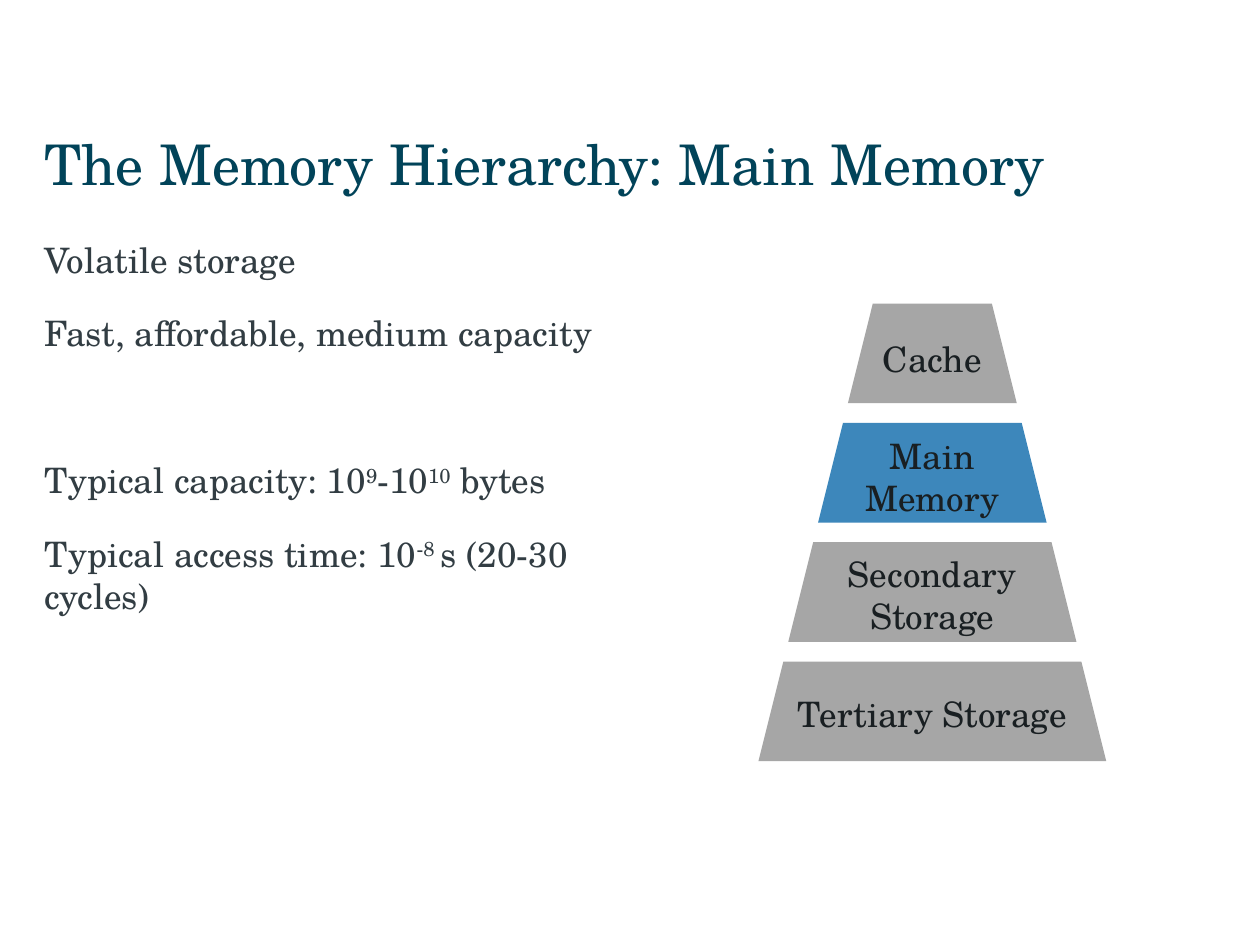
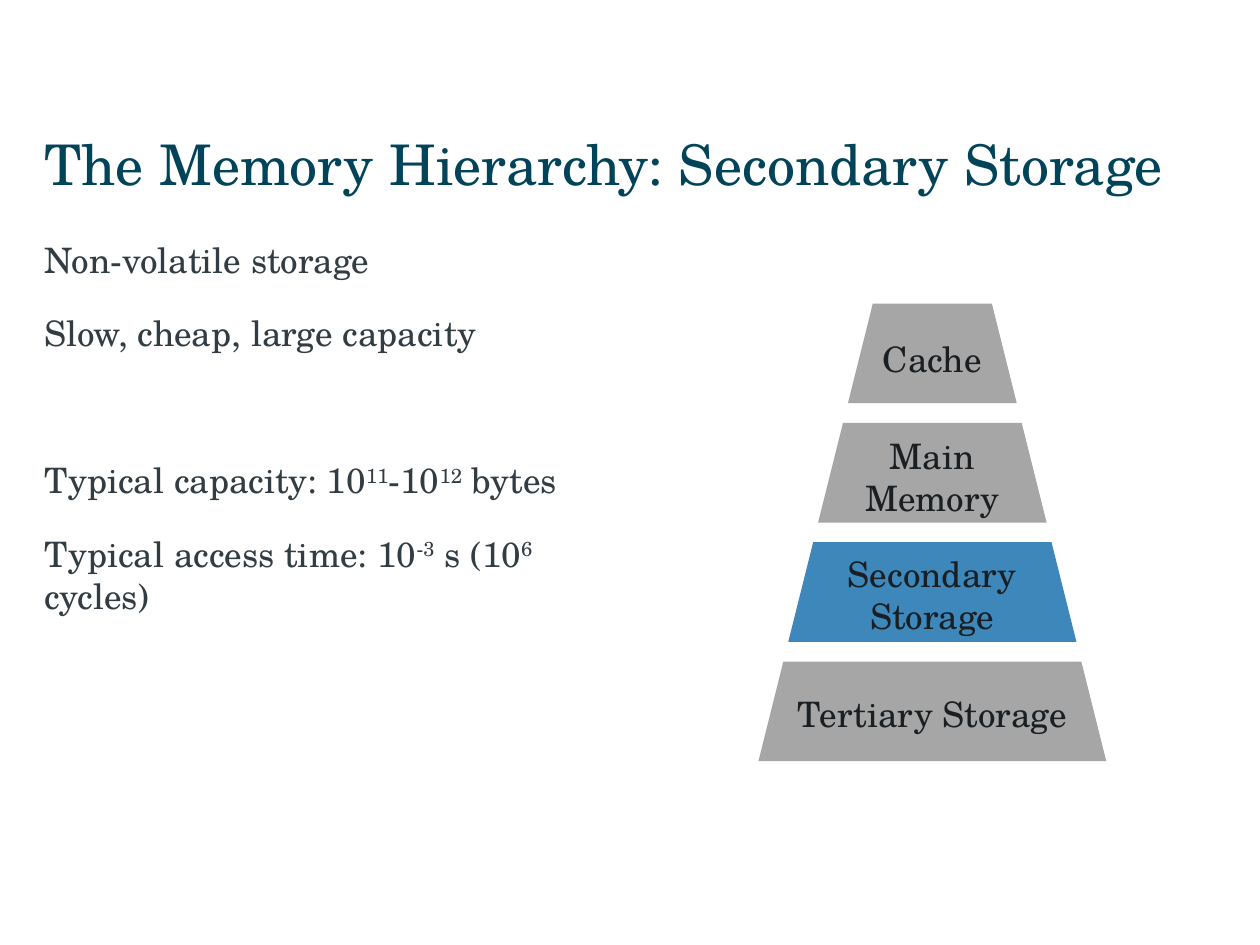
import pptx
import pptx.util
import pptx.dml.color
import pptx.enum.shapes
import pptx.enum.text

Inches = pptx.util.Inches
Pt = pptx.util.Pt
RGBColor = pptx.dml.color.RGBColor
Align = pptx.enum.text.PP_ALIGN
Anchor = pptx.enum.text.MSO_ANCHOR

FONT = "TeX Gyre Schola"
TEAL = RGBColor(0x01, 0x43, 0x59)
SLATE = RGBColor(0x32, 0x3D, 0x43)
INK = RGBColor(0x19, 0x1F, 0x22)
GREY = RGBColor(0xA6, 0xA6, 0xA6)
BLUE = RGBColor(0x3D, 0x87, 0xBB)

LEVELS = ["Cache", "Main Memory", "Secondary Storage", "Tertiary Storage"]
CENTER = 7.4
TOP = 2.41
HEIGHT = 0.79
PITCH = (5.25 - TOP) / 3
WIDTH = 1.34
GROWTH = (2.76 - WIDTH) / 3

SLIDES = [
    ("Main Memory",
     ["Volatile storage", "Fast, affordable, medium capacity"],
     ["Typical capacity: 10^9^-10^10^ bytes",
      "Typical access time: 10^-8 ^s (20-30 cycles)"]),
    ("Secondary Storage",
     ["Non-volatile storage", "Slow, cheap, large capacity"],
     ["Typical capacity: 10^11^-10^12^ bytes",
      "Typical access time: 10^-3^ s (10^6^ cycles)"]),
]


def style(run, size, color):
    run.font.name = FONT
    run.font.size = Pt(size)
    run.font.color.rgb = color


def place(holder, left, top, width, height):
    holder.left, holder.top = Inches(left), Inches(top)
    holder.width, holder.height = Inches(width), Inches(height)
    frame = holder.text_frame
    frame.auto_size = pptx.enum.text.MSO_AUTO_SIZE.NONE
    frame.word_wrap = True
    frame.vertical_anchor = Anchor.TOP
    frame.margin_left = 0
    frame.margin_right = Inches(0.1)
    frame.margin_top = frame.margin_bottom = Inches(0.05)
    return frame


def add_title(slide, text):
    frame = place(slide.shapes.title, 0.35, 0.98, 9.29, 0.71)
    frame.text = text
    line = frame.paragraphs[0]
    line.alignment = Align.LEFT
    style(line.runs[0], 32, TEAL)


def add_line(line, text, after):
    line.space_before = Pt(0)
    line.space_after = Pt(after)
    props = line._p.get_or_add_pPr()
    props.set("marL", "0")
    props.set("indent", "0")
    pptx.oxml.xmlchemy.OxmlElement
    props.append(pptx.oxml.xmlchemy.OxmlElement("a:buNone"))
    for index, part in enumerate(text.split("^")):
        run = line.add_run()
        run.text = part
        style(run, 20, SLATE)
        if index % 2:
            run._r.get_or_add_rPr().set("baseline", "30000")


def add_body(slide, traits, figures):
    frame = place(slide.placeholders[1], 0.35, 1.84, 4.48, 4.91)
    for index, text in enumerate(traits + figures):
        line = frame.add_paragraph() if index else frame.paragraphs[0]
        add_line(line, text, 60 if index == len(traits) - 1 else 18)


def add_level(slide, index, name, fill):
    width = WIDTH + index * GROWTH
    level = slide.shapes.add_shape(
        pptx.enum.shapes.MSO_SHAPE.TRAPEZOID,
        Inches(CENTER - width / 2), Inches(TOP + index * PITCH),
        Inches(width), Inches(HEIGHT))
    level.shadow.inherit = False
    level.fill.solid()
    level.fill.fore_color.rgb = fill
    level.line.fill.background()
    frame = level.text_frame
    frame.word_wrap = True
    frame.vertical_anchor = Anchor.MIDDLE
    frame.margin_left = frame.margin_right = Inches(0.1)
    frame.margin_top = frame.margin_bottom = 0
    frame.text = name
    line = frame.paragraphs[0]
    line.alignment = Align.CENTER
    style(line.runs[0], 20, INK)


def main():
    deck = pptx.Presentation()
    deck.slide_width, deck.slide_height = Inches(10), Inches(7.5)
    for topic, traits, figures in SLIDES:
        slide = deck.slides.add_slide(deck.slide_layouts[1])
        add_title(slide, "The Memory Hierarchy: " + topic)
        add_body(slide, traits, figures)
        for index, name in enumerate(LEVELS):
            add_level(slide, index, name, BLUE if name == topic else GREY)
    deck.save("out.pptx")


if __name__ == "__main__":
    main()
